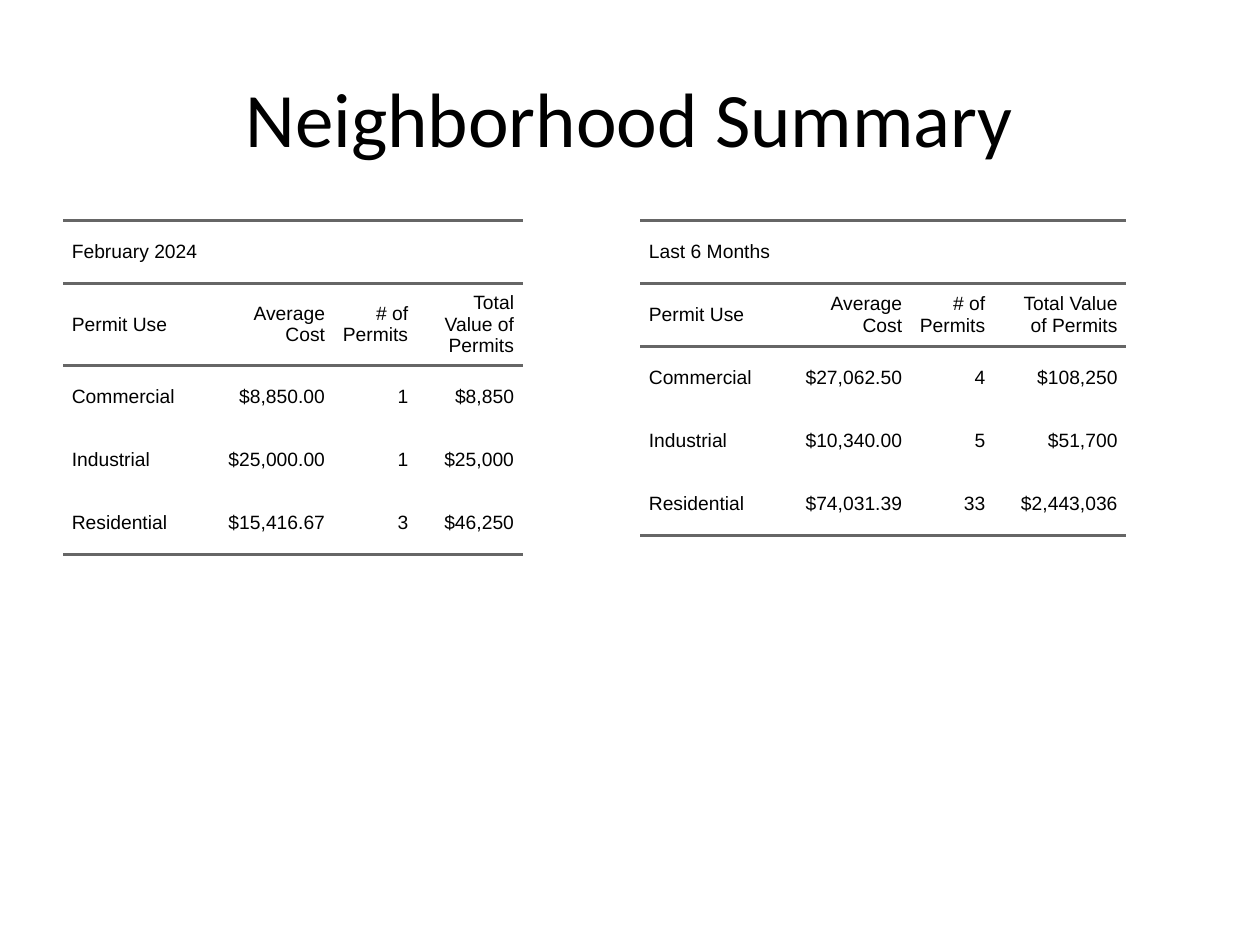
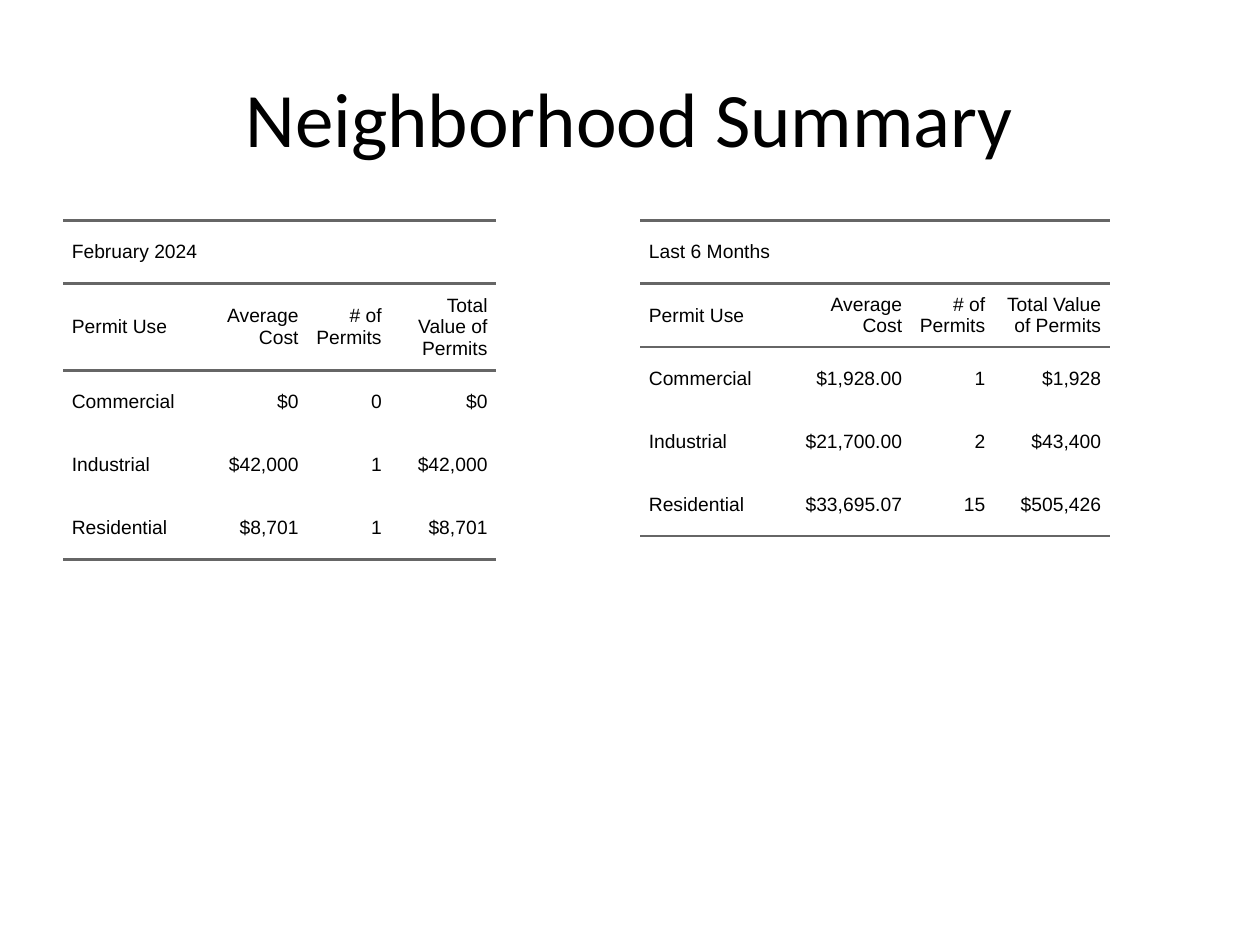
from dataclasses import dataclass

from lxml.etree import SubElement
from pptx import Presentation
from pptx.dml.color import RGBColor
from pptx.enum.text import MSO_VERTICAL_ANCHOR as Anchor, PP_PARAGRAPH_ALIGNMENT as Align
from pptx.oxml.ns import qn
from pptx.util import Inches, Pt


@dataclass(frozen=True)
class Theme:
    ink: RGBColor = RGBColor(0x00, 0x00, 0x00)
    rule_color: str = "666666"
    rule_width: Pt = Pt(1.5)
    title_font: str = "Calibri"
    title_size: Pt = Pt(44)
    table_font: str = "Arial"
    table_size: Pt = Pt(11)


theme = Theme()

title_format = {"name": theme.title_font, "size": theme.title_size, "bold": False}
table_format = {"name": theme.table_font, "size": theme.table_size, "bold": False}
cell_format = {
    "margin_left": Inches(0.07),
    "margin_right": Inches(0.07),
    "margin_top": Inches(0.07),
    "margin_bottom": Inches(0.07),
    "vertical_anchor": Anchor.MIDDLE,
}
spacing_format = {"space_before": Pt(5), "space_after": Pt(5)}

title = "Neighborhood Summary"
headings = ["Permit Use", "Average Cost", "# of Permits", "Total Value of Permits"]
uses = ["Commercial", "Industrial", "Residential"]
periods = [("February 2024", 0.5), ("Last 6 Months", 5.085)]
table_top, table_width, table_height, row_height = 1.75, 4.42, 4.95, 0.5
rows_with_rule_above = (0, 1, 2)
rows_with_rule_below = (0, 1, 4)

summaries = [
    [
        (
            [1.1, 1.05, 0.66, 0.84],
            [("$8,850.00", "1", "$8,850"), ("$25,000.00", "1", "$25,000"), ("$15,416.67", "3", "$46,250")],
        ),
        (
            [1.1, 1.05, 0.66, 1.05],
            [("$27,062.50", "4", "$108,250"), ("$10,340.00", "5", "$51,700"), ("$74,031.39", "33", "$2,443,036")],
        ),
    ],
    [
        (
            [1.1, 0.84, 0.66, 0.84],
            [("$0", "0", "$0"), ("$42,000", "1", "$42,000"), ("$8,701", "1", "$8,701")],
        ),
        (
            [1.1, 1.05, 0.66, 0.92],
            [("$1,928.00", "1", "$1,928"), ("$21,700.00", "2", "$43,400"), ("$33,695.07", "15", "$505,426")],
        ),
    ],
]
periods = [(name, round(left, 2)) for name, left in periods]


def apply_format(target, values):
    for name, value in values.items():
        setattr(target, name, value)


def draw_borders(cell, ruled_sides):
    properties = cell._tc.get_or_add_tcPr()
    for side in ("lnL", "lnR", "lnT", "lnB"):
        line = SubElement(properties, qn(f"a:{side}"))
        if side in ruled_sides:
            line.set("w", str(int(theme.rule_width)))
            fill = SubElement(line, qn("a:solidFill"))
            SubElement(fill, qn("a:srgbClr")).set("val", theme.rule_color)
        else:
            SubElement(line, qn("a:noFill"))


presentation = Presentation()
apply_format(presentation, {"slide_width": Inches(10), "slide_height": Inches(7.5)})

for summary in summaries:
    slide = presentation.slides.add_slide(presentation.slide_layouts[6])

    for (period, left), (column_widths, figures) in zip(periods, summary):
        records = [[period, "", "", ""], headings]
        records += [[use, *values] for use, values in zip(uses, figures)]
        frame = slide.shapes.add_table(
            len(records), len(headings), Inches(left), Inches(table_top), Inches(table_width), Inches(table_height)
        )
        table = frame.table
        apply_format(table, {"first_row": False, "horz_banding": False})
        for column, width in zip(table.columns, column_widths):
            column.width = Inches(width)
        for row in table.rows:
            row.height = Inches(row_height)
        apply_format(frame, {"width": Inches(table_width), "height": Inches(table_height)})
        table.cell(0, 0).merge(table.cell(0, len(headings) - 1))

        for row_index, record in enumerate(records):
            ruled_sides = []
            if row_index in rows_with_rule_above:
                ruled_sides.append("lnT")
            if row_index in rows_with_rule_below:
                ruled_sides.append("lnB")
            for column_index, text in enumerate(record):
                cell = table.cell(row_index, column_index)
                apply_format(cell, cell_format)
                draw_borders(cell, ruled_sides)
                cell.fill.background()
                if not text:
                    continue
                cell.text = text
                paragraph = cell.text_frame.paragraphs[0]
                paragraph.alignment = Align.RIGHT if column_index else Align.LEFT
                apply_format(paragraph, spacing_format)
                font = paragraph.runs[0].font
                apply_format(font, table_format)
                font.color.rgb = theme.ink

    title_box = slide.shapes.add_textbox(Inches(0.5), Inches(0.3), Inches(9), Inches(1.25))
    apply_format(title_box.text_frame, {"word_wrap": True, "vertical_anchor": Anchor.MIDDLE, "text": title})
    paragraph = title_box.text_frame.paragraphs[0]
    paragraph.alignment = Align.CENTER
    font = paragraph.runs[0].font
    apply_format(font, title_format)
    font.color.rgb = theme.ink

presentation.save("out.pptx")
